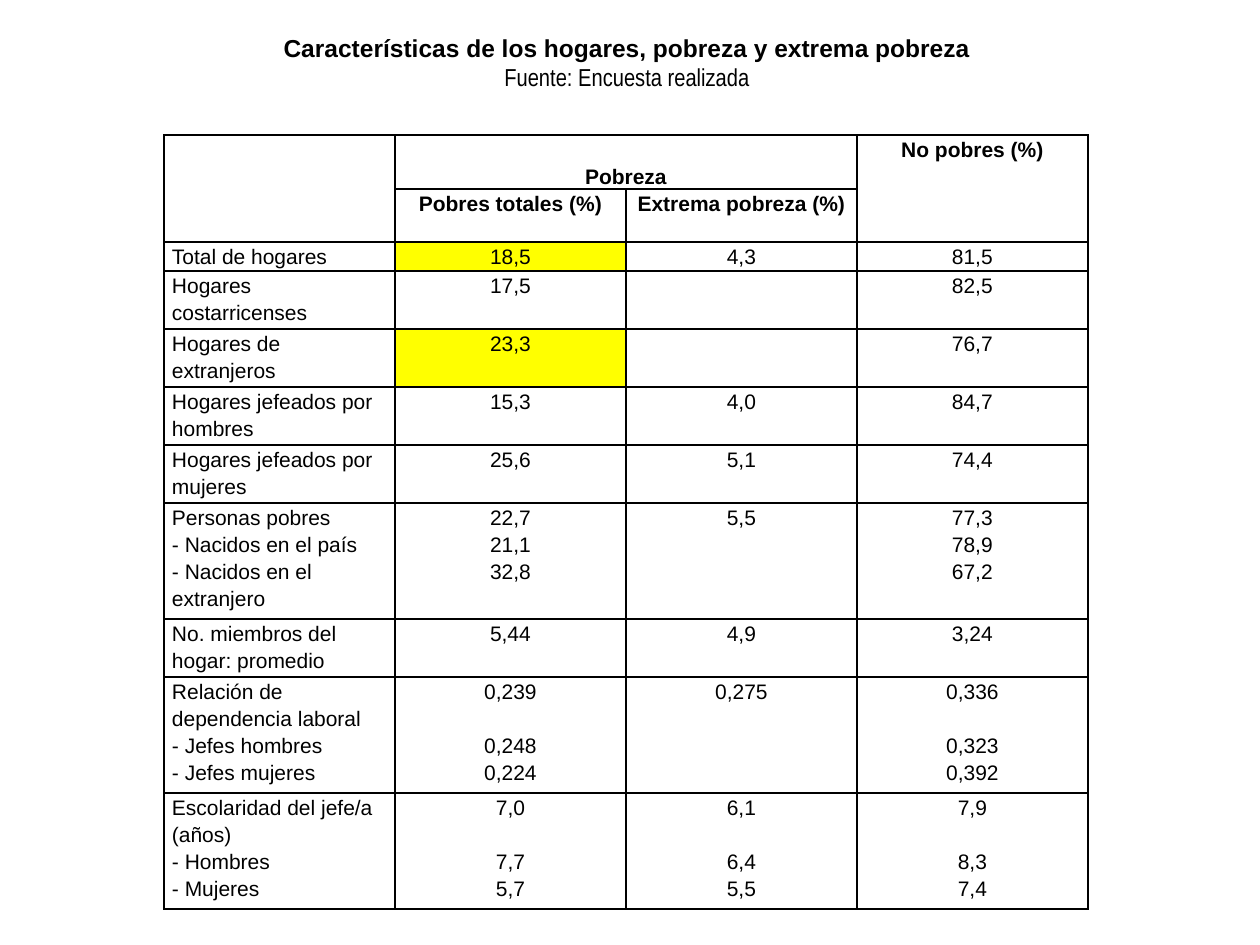
from lxml import etree
from pptx import Presentation
from pptx import util as u
from pptx.dml.color import RGBColor
from pptx.enum import text
from pptx.oxml.ns import qn

SCALE = u.Inches(1) / 126
COLORS = {"ink": "000000", "paper": "FFFFFF", "mark": "FFFF00"}
HEADER_HEIGHTS = [54, 53]
LINE_GAP = 27

HEADERS = [
    (0, 1, "Pobreza"),
    (0, 3, "No pobres (%)"),
    (1, 1, "Pobres totales (%)"),
    (1, 2, "Extrema pobreza (%)"),
]
MERGES = [((0, 0), (1, 0)), ((0, 1), (0, 2)), ((0, 3), (1, 3))]
MARKED = {(2, 1), (4, 1)}
GAPPED = {9, 10}
ROWS = [
    (29, "Total de hogares", "18,5", "4,3", "81,5"),
    (58, "Hogares costarricenses", "17,5", "", "82,5"),
    (58, "Hogares de extranjeros", "23,3", "", "76,7"),
    (58, "Hogares jefeados por hombres", "15,3", "4,0", "84,7"),
    (58, "Hogares jefeados por mujeres", "25,6", "5,1", "74,4"),
    (116, "Personas pobres\n- Nacidos en el país\n- Nacidos en el extranjero",
     "22,7\n21,1\n32,8", "5,5", "77,3\n78,9\n67,2"),
    (58, "No. miembros del hogar: promedio", "5,44", "4,9", "3,24"),
    (116, "Relación de dependencia laboral\n- Jefes hombres\n- Jefes mujeres",
     "0,239\n0,248\n0,224", "0,275", "0,336\n0,323\n0,392"),
    (116, "Escolaridad del jefe/a (años)\n- Hombres\n- Mujeres",
     "7,0\n7,7\n5,7", "6,1\n6,4\n5,5", "7,9\n8,3\n7,4"),
]


def px(n):
    """Turn px into EMU."""
    return u.Emu(round(n * SCALE))


def add_run(p, words, size, font="Arial", bold=False):
    """Add one formatted run to a paragraph."""
    r = p.add_run()
    r.text = words
    r.font.size = u.Pt(size)
    r.font.name = font
    r.font.bold = bold
    r.font.color.rgb = RGBColor.from_string(COLORS["ink"])


def add_title(s, x, y, w, h):
    """Place the title and its source line in the title placeholder."""
    sp = s.shapes.title
    sp.left, sp.top, sp.width, sp.height = px(x), px(y), px(w), px(h)
    tf = sp.text_frame
    tf.word_wrap = False
    tf.auto_size = text.MSO_AUTO_SIZE.NONE
    tf.vertical_anchor = text.MSO_ANCHOR.MIDDLE
    p = tf.paragraphs[0]
    p.alignment = text.PP_ALIGN.CENTER
    add_run(p, "Características de los hogares, pobreza y extrema pobreza", 14, bold=True)
    p = tf.add_paragraph()
    p.alignment = text.PP_ALIGN.CENTER
    add_run(p, "Fuente: Encuesta realizada", 14, "Arial Narrow")


def style_cell(cell, fill):
    """Set the margins, borders and fill of a cell."""
    cell.margin_left = cell.margin_right = px(8)
    cell.margin_top = cell.margin_bottom = 0
    tc_pr = cell._tc.get_or_add_tcPr()
    for side in ("a:lnL", "a:lnR", "a:lnT", "a:lnB"):
        ln = etree.SubElement(tc_pr, qn(side), w=str(u.Pt(1)))
        solid = etree.SubElement(ln, qn("a:solidFill"))
        etree.SubElement(solid, qn("a:srgbClr"), val=COLORS["ink"])
    cell.fill.solid()
    cell.fill.fore_color.rgb = RGBColor.from_string(COLORS[fill])


def fill_cell(cell, words, centered=True, bold=False, gap=False):
    """Write the lines of a cell, with an optional gap after the first."""
    tf = cell.text_frame
    for i, line in enumerate(words.split("\n")):
        p = tf.add_paragraph() if i else tf.paragraphs[0]
        p.alignment = text.PP_ALIGN.CENTER if centered else text.PP_ALIGN.LEFT
        p.line_spacing = 1.15
        if gap and i == 1:
            p.space_before = px(LINE_GAP)
        if line:
            add_run(p, line, 12, bold=bold)


def add_poverty_table(s, x, y, w):
    """Place the household table with its two header rows."""
    heights = HEADER_HEIGHTS + [row[0] for row in ROWS]
    table = s.shapes.add_table(len(heights), 4, px(x), px(y), px(w), px(sum(heights))).table
    table.first_row = table.horz_banding = False
    for row, height in zip(table.rows, heights):
        row.height = px(height)
    for col in table.columns:
        col.width = px(w / 4)
    for i in range(len(heights)):
        for j in range(4):
            style_cell(table.cell(i, j), "mark" if (i, j) in MARKED else "paper")
    for start, end in MERGES:
        table.cell(*start).merge(table.cell(*end))
    for i, j, words in HEADERS:
        fill_cell(table.cell(i, j), words, bold=True)
    table.cell(0, 1).vertical_anchor = text.MSO_ANCHOR.BOTTOM
    for i, (_, *cells) in enumerate(ROWS, len(HEADER_HEIGHTS)):
        for j, words in enumerate(cells):
            fill_cell(table.cell(i, j), words, centered=j > 0, gap=j > 0 and i in GAPPED)


def main():
    """Build and save the slide."""
    prs = Presentation()
    prs.slide_width, prs.slide_height = u.Inches(10), u.Inches(7.5)
    s = prs.slides.add_slide(prs.slide_layouts[5])
    add_poverty_table(s, 164, 135, 924)
    add_title(s, 270, 26, 714, 72)
    prs.save("out.pptx")


if __name__ == "__main__":
    main()
